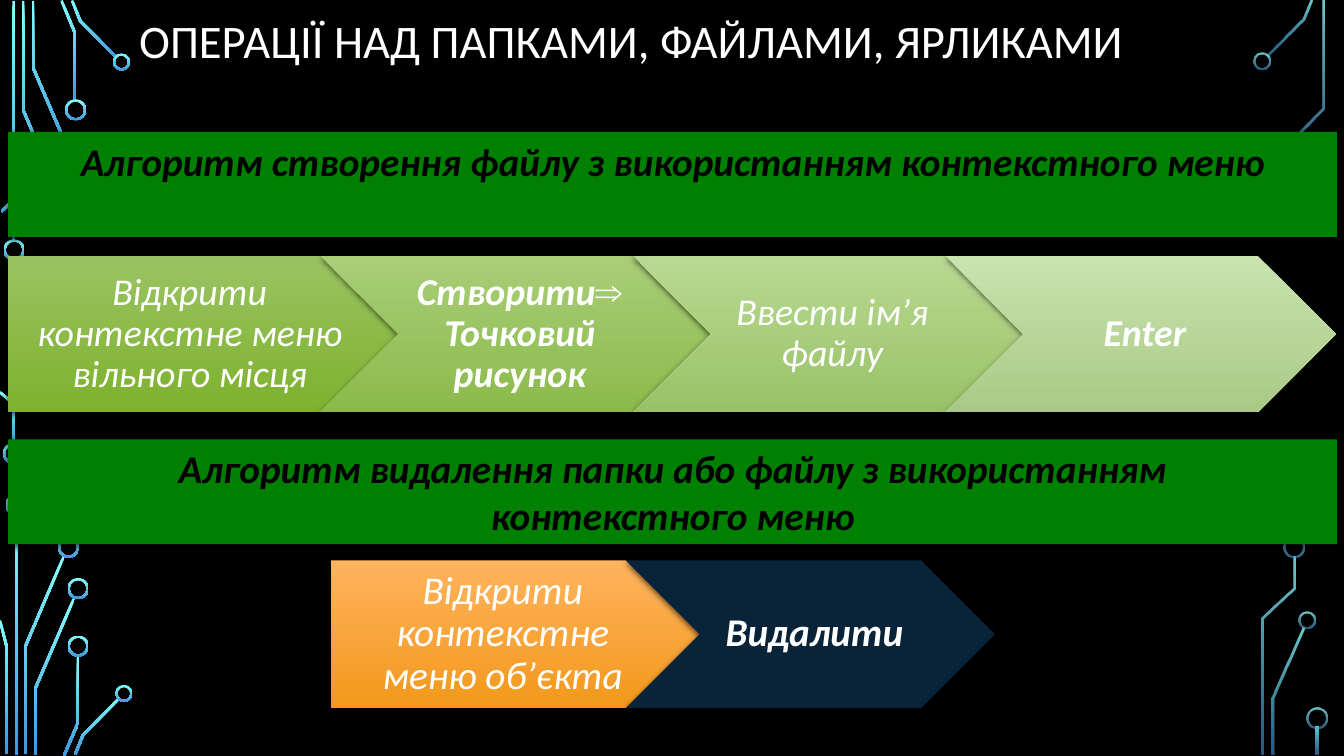
from math import hypot

from lxml.etree import SubElement
from pptx import Presentation
from pptx.dml.color import RGBColor
from pptx.enum.shapes import MSO_SHAPE as Preset
from pptx.enum.text import MSO_ANCHOR as Anchor, MSO_AUTO_SIZE as AutoSize, PP_ALIGN as Align
from pptx.oxml.ns import qn
from pptx.util import Inches, Pt

CELL = Inches(0.1)  # the slide is a grid of square cells, 133.33 columns by 75 rows
BLACK = RGBColor(0x00, 0x00, 0x00)
WHITE = RGBColor(0xFF, 0xFF, 0xFF)
GREEN = RGBColor(0x00, 0x80, 0x00)
NAVY = RGBColor(0x09, 0x23, 0x38)
ORANGE = (RGBColor(0xFE, 0xB3, 0x5D), RGBColor(0xF3, 0x98, 0x1B))
CYAN_BLUE = (RGBColor(0x82, 0xFF, 0xFF), RGBColor(0x3D, 0x97, 0xDE))
LIGHT_GREENS = (
    (RGBColor(0x99, 0xC3, 0x62), RGBColor(0x7E, 0xB2, 0x2E)),
    (RGBColor(0xA8, 0xCE, 0x78), RGBColor(0x8B, 0xBA, 0x4B)),
    (RGBColor(0xB8, 0xD9, 0x92), RGBColor(0x99, 0xC2, 0x68)),
    (RGBColor(0xC9, 0xE3, 0xAD), RGBColor(0xA9, 0xCA, 0x86)),
)
OPAQUE, FADED = (100, 100), (80, 60)

# Centre lines of the circuit traces, and (column, row, diameter) of their end rings
LEFT_TRACES = (
    ((1.35, 0.1), (1.35, 24)),
    ((2.3, 0.1), (2.3, 10.9), (6.1, 19.85)),
    ((3.25, 0.1), (3.25, 6.65), (7.1, 15.65)),
    ((6.1, 0.05), (7.45, 3.3), (7.45, 10)),
    ((7.15, 0.05), (7.95, 2.05), (11.55, 5.7)),
    ((0.15, 21), (1.4, 19.8)),
    ((0, 38.9), (1.4, 40.1), (1.4, 44.1)),
    ((1.65, 51), (1.65, 74.9)),
    ((2.55, 74.8), (2.55, 64.05), (6.35, 55.15)),
    ((0, 61.55), (0.65, 64.1), (0.65, 74.8)),
    ((3.55, 74.9), (3.55, 68.2), (7.35, 59.35)),
    ((6.35, 74.95), (7.75, 71.7), (7.75, 65)),
    ((7.45, 74.85), (8.25, 72.9), (11.8, 69.3)),
)
LEFT_RINGS = (
    (1.4, 24.8, 2.1), (1.35, 45, 2.1), (7.5, 10.9, 2.1), (12.05, 6.15, 1.7), (1.6, 50.1, 2.1),
    (6.8, 54.3, 2.1), (7.75, 58.4, 2.1), (7.75, 64.1, 2.1), (12.3, 68.8, 1.7),
)
RIGHT_TRACES = (
    ((130.05, 0.05), (129.25, 1.95), (125.7, 5.55)),
    ((126.25, 74.9), (126.25, 69.3), (129.3, 62.35)),
    ((128.2, 16.9), (128.2, 13.85), (131.25, 10.75), (131.25, 0.1)),
    ((128.35, 55.2), (128.35, 58.35), (125.25, 61.35), (125.25, 74.9)),
    ((130.65, 72.1), (130.65, 74.9)),
)
RIGHT_RINGS = ((125.2, 6.05, 1.7), (129.6, 61.5, 1.7), (128.3, 54.3, 2.1), (130.6, 71.2, 2.1))


def cells(*counts):
    return [round(count * CELL) for count in counts]


def ribbon(points, width):
    """Return the outline of a band of the given width along a centre line."""
    normals = []
    for (x1, y1), (x2, y2) in zip(points, points[1:]):
        length = hypot(x2 - x1, y2 - y1)
        normals.append(((y1 - y2) / length, (x2 - x1) / length))
    right, left = [], []
    for (x, y), (ax, ay), (bx, by) in zip(points, normals[:1] + normals, normals + normals[-1:]):
        reach = width / 2 / (1 + ax * bx + ay * by)
        dx, dy = (ax + bx) * reach, (ay + by) * reach
        right.append((x + dx, y + dy))
        left.append((x - dx, y - dy))
    return right + left[::-1]


class SlideBuilder:
    font = "Calibri"
    trace_width = 0.25
    ring_width = 0.2

    def __init__(self, presentation):
        self.slide = presentation.slides.add_slide(presentation.slide_layouts[5])
        self.shapes = self.slide.shapes
        background = self.slide.background.fill
        background.solid()
        background.fore_color.rgb = BLACK

    def paint(self, shape, colors, opacities=OPAQUE):
        """Fill with one colour, or with a pair running from top to bottom."""
        shape.shadow.inherit = False
        shape.line.fill.background()
        if isinstance(colors, RGBColor):
            shape.fill.solid()
            shape.fill.fore_color.rgb = colors
            return
        shape.fill.gradient()
        shape.fill.gradient_angle = 270
        for stop, color, opacity in zip(shape.fill.gradient_stops, colors, opacities):
            stop.color.rgb = color
        if opacities != OPAQUE:
            for node, opacity in zip(shape._element.spPr.iter(qn("a:srgbClr")), opacities):
                SubElement(node, qn("a:alpha"), val=str(opacity * 1000))

    def cast_shadow(self, shape):
        effects = shape._element.spPr.find(qn("a:effectLst"))
        shadow = SubElement(effects, qn("a:outerShdw"), blurRad=str(Pt(4.5)),
                            dist=str(Pt(1.5)), dir="5400000", rotWithShape="0")
        color = SubElement(shadow, qn("a:srgbClr"), val=str(BLACK))
        SubElement(color, qn("a:alpha"), val="63000")

    def format(self, paragraph, size, color, align=Align.CENTER, bold=False, italic=False):
        paragraph.alignment = align
        font = paragraph.font
        font.name, font.size, font.bold, font.italic = self.font, Pt(size), bold, italic
        font.color.rgb = color

    def title(self, text, box):
        title = self.shapes.title
        title.left, title.top, title.width, title.height = cells(*box)
        frame = title.text_frame
        frame.text = text
        frame.auto_size = AutoSize.NONE
        frame.vertical_anchor = Anchor.TOP
        paragraph = frame.paragraphs[0]
        paragraph.line_spacing = 0.8
        self.format(paragraph, 33.3, WHITE, Align.LEFT)

    def circuit(self, traces, rings, opacities):
        for trace in traces:
            start, *rest = [cells(*point) for point in ribbon(trace, self.trace_width)]
            builder = self.shapes.build_freeform(*start)
            builder.add_line_segments(rest, close=True)
            self.paint(builder.convert_to_shape(), CYAN_BLUE, opacities)
        for x, y, size in rings:
            ring = self.shapes.add_shape(
                Preset.DONUT, *cells(x - size / 2, y - size / 2, size, size))
            ring.adjustments[0] = self.ring_width / size
            self.paint(ring, CYAN_BLUE, opacities)

    def banner(self, top, *lines):
        banner = self.shapes.add_shape(Preset.RECTANGLE, *cells(0.8, top, 131.8, 10.4))
        self.paint(banner, GREEN)
        self.cast_shadow(banner)
        frame = banner.text_frame
        frame.vertical_anchor = Anchor.TOP
        frame.text = "\n".join(lines)
        for paragraph in frame.paragraphs:
            self.format(paragraph, 28, BLACK, bold=True, italic=True)

    def process(self, left, top, width, size, steps):
        """Draw a row of interlocking arrows from (fill, bold, text runs) steps."""
        for index, (colors, bold, runs) in enumerate(steps):
            preset = Preset.CHEVRON if index else Preset.PENTAGON
            step = self.shapes.add_shape(
                preset, *cells(left + index * width * 0.8, top, width, width * 0.4))
            self.paint(step, colors)
            self.cast_shadow(step)
            frame = step.text_frame
            frame.word_wrap = True
            frame.vertical_anchor = Anchor.MIDDLE
            frame.margin_left, frame.margin_right = cells(1.2 if index else 1.6, 0.4)
            frame.margin_top, frame.margin_bottom = cells(0.8, 0.8)
            paragraph = frame.paragraphs[0]
            paragraph.line_spacing = 0.9
            self.format(paragraph, size, WHITE, bold=bold, italic=True)
            for text in runs:
                run = paragraph.add_run()
                run.text = text
                if text.startswith("⇒"):
                    run.font.name = "Times New Roman"


def main():
    presentation = Presentation()
    presentation.slide_width, presentation.slide_height = Inches(13.33), Inches(7.5)
    builder = SlideBuilder(presentation)
    builder.circuit(LEFT_TRACES, LEFT_RINGS, OPAQUE)
    builder.circuit(RIGHT_TRACES, RIGHT_RINGS, FADED)
    builder.title("ОПЕРАЦІЇ НАД ПАПКАМИ, ФАЙЛАМИ, ЯРЛИКАМИ", (12.8, 1.8, 117.2, 5.8))
    builder.banner(13.1, "Алгоритм створення файлу з використанням контекстного меню")
    builder.process(0.8, 25.4, 38.74, 27, (
        (LIGHT_GREENS[0], False, ["Відкрити контекстне меню вільного місця"]),
        (LIGHT_GREENS[1], True, ["Створити", "⇒ ", "Точковий рисунок"]),
        (LIGHT_GREENS[2], False, ["Ввести ім’я файлу"]),
        (LIGHT_GREENS[3], True, ["Enter"]),
    ))
    builder.banner(43.6, "Алгоритм видалення папки або файлу з використанням", "контекстного меню")
    builder.process(32.8, 55.6, 36.6, 28, (
        (ORANGE, False, ["Відкрити контекстне меню об’єкта"]),
        (NAVY, True, ["Видалити"]),
    ))
    presentation.save("out.pptx")


if __name__ == "__main__":
    main()
